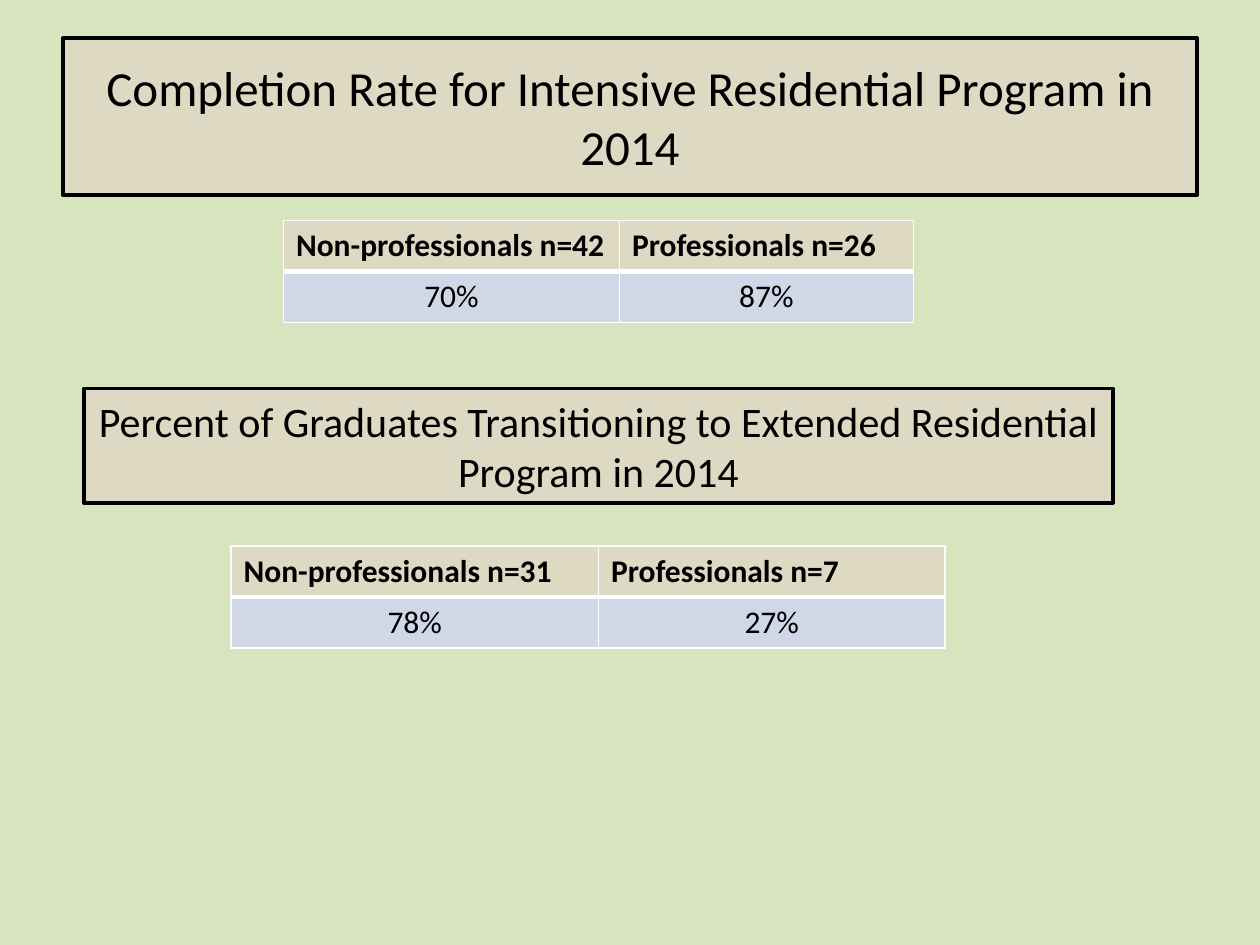
from lxml import etree
from pptx import Presentation
from pptx.dml.color import RGBColor
from pptx.enum.shapes import MSO_SHAPE
from pptx.enum.text import MSO_ANCHOR, PP_ALIGN
from pptx.oxml.ns import qn
from pptx.util import Inches, Pt

RECTANGLE = MSO_SHAPE.RECTANGLE
MIDDLE = MSO_ANCHOR.MIDDLE
LEFT, CENTER = PP_ALIGN.LEFT, PP_ALIGN.CENTER


def color(value):
    return RGBColor.from_string(value)


def paint(target, value):
    target.fill.solid()
    target.fill.fore_color.rgb = color(value)


class SlideBuilder:
    FONT = "Calibri"
    INK = "000000"
    BACKGROUND = "D7E4BD"
    PANEL = "DDD9C3"
    BODY = "D0D8E8"
    BORDER = "FFFFFF"
    COLUMNS, ROWS = 120, 90
    TABLE_ROW = 4.86

    def __init__(self, presentation):
        self.column = presentation.slide_width / self.COLUMNS
        self.row = presentation.slide_height / self.ROWS
        self.slide = presentation.slides.add_slide(presentation.slide_layouts[6])
        paint(self.slide.background, self.BACKGROUND)

    def place(self, left, top, width, height):
        return (round(left * self.column), round(top * self.row),
                round(width * self.column), round(height * self.row))

    def set_text(self, text_frame, text, size, alignment, bold=False):
        text_frame.text = text
        text_frame.word_wrap = True
        paragraph = text_frame.paragraphs[0]
        paragraph.alignment = alignment
        font = paragraph.runs[0].font
        font.name, font.size, font.bold = self.FONT, Pt(size), bold
        font.color.rgb = color(self.INK)

    def heading(self, text, size, left, top, width, height):
        shape = self.slide.shapes.add_shape(
            RECTANGLE, *self.place(left, top, width, height))
        shape.shadow.inherit = False
        paint(shape, self.PANEL)
        shape.line.color.rgb = color(self.INK)
        shape.line.width = Pt(2)
        shape.text_frame.vertical_anchor = MIDDLE
        self.set_text(shape.text_frame, text, size, CENTER)

    def borders(self, cell, **widths):
        properties = cell._tc.get_or_add_tcPr()
        for index, side in enumerate("LRTB"):
            line = etree.Element(qn(f"a:ln{side}"), w=str(Pt(widths.get(side, 1))))
            fill = etree.SubElement(line, qn("a:solidFill"))
            etree.SubElement(fill, qn("a:srgbClr"), val=self.BORDER)
            properties.insert(index, line)

    def table(self, rows, left, top, column_widths):
        position = self.place(left, top, sum(column_widths),
                              self.TABLE_ROW * len(rows))
        table = self.slide.shapes.add_table(
            len(rows), len(column_widths), *position).table
        for table_column, width in zip(table.columns, column_widths):
            table_column.width = round(width * self.column)
        for row_index, values in enumerate(rows):
            header = row_index == 0
            for column_index, value in enumerate(values):
                cell = table.cell(row_index, column_index)
                paint(cell, self.PANEL if header else self.BODY)
                self.borders(cell, **{"B" if header else "T": 3})
                self.set_text(cell.text_frame, value, 18,
                              LEFT if header else CENTER, header)


def main():
    presentation = Presentation()
    presentation.slide_width = Inches(10)
    presentation.slide_height = Inches(7.5)
    builder = SlideBuilder(presentation)
    builder.heading("Completion Rate for Intensive Residential Program in 2014",
                    28, 6, 3.6, 108, 15)
    builder.table([["Non-professionals n=42", "Professionals n=26"],
                   ["70%", "87%"]], 27, 21, [32, 28])
    builder.heading("Percent of Graduates Transitioning to Extended Residential "
                    "Program in 2014", 24, 8, 37, 98, 10.9)
    builder.table([["Non-professionals n=31", "Professionals n=7"],
                   ["78%", "27%"]], 22, 52, [35, 33])
    presentation.save("out.pptx")


if __name__ == "__main__":
    main()
